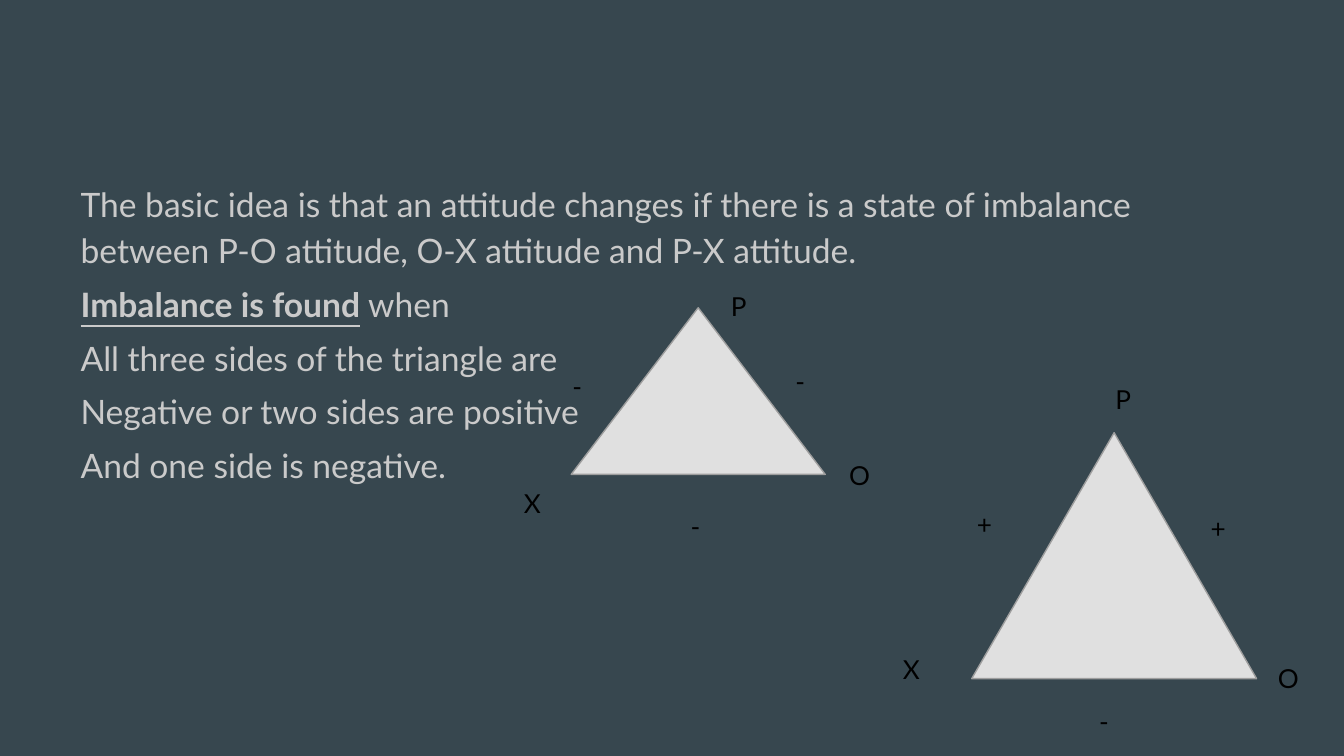
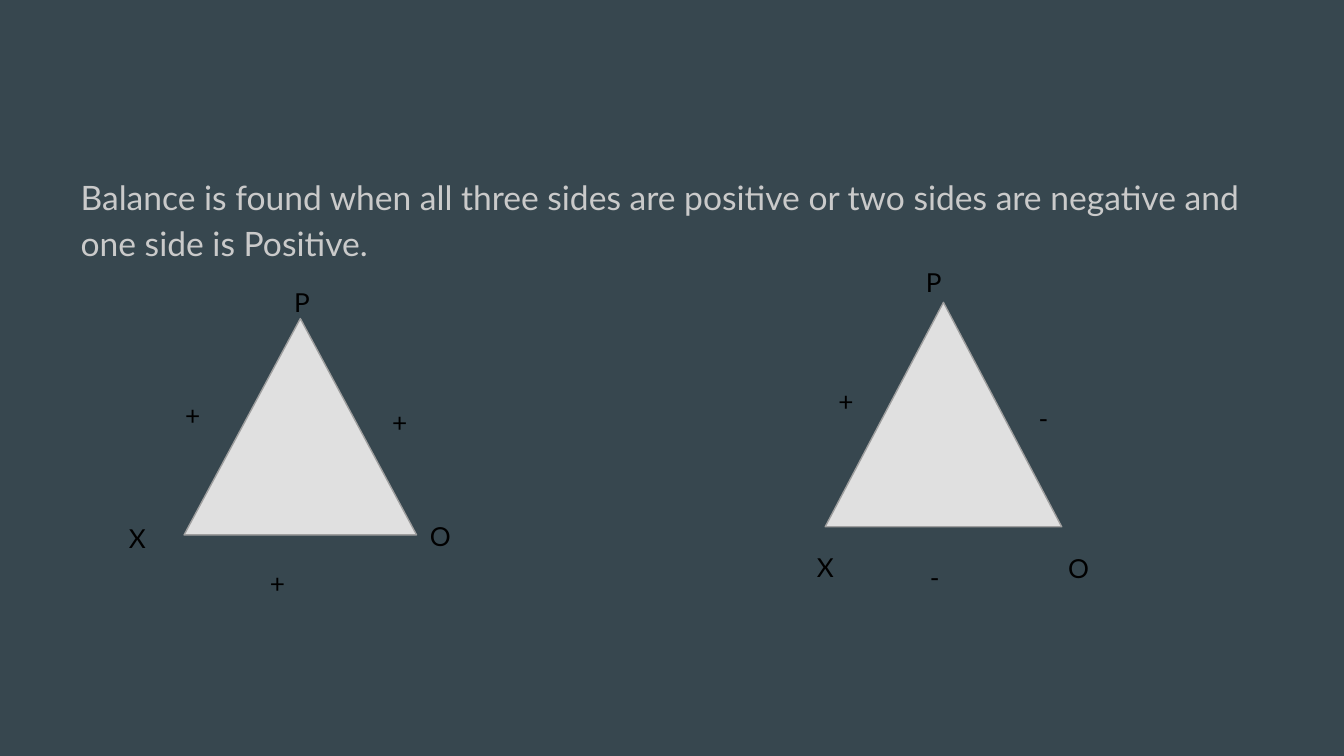
from pptx import Presentation
from pptx import util as u
from pptx.dml import color
from pptx.enum import shapes, text
from pptx.oxml import xmlchemy

PX = u.Inches(1) // 100
SLIDE_WIDTH = 1000
FONT = "Lato"
BACKGROUND, BODY, LABEL = "37474F", "CACACA", "000000"
FILL, OUTLINE = "E0E0E0", "9E9E9E"

SLIDES = [
    {
        "body": (50, 127, 900, 371),
        "paragraphs": [
            [("The basic idea is that an attitude changes if there is a state of imbalance "
              "between P-O attitude, O-X attitude and P-X attitude.", False)],
            [("Imbalance is found", True), (" when", False)],
            [("All three sides of the triangle are", False)],
            [("Negative or two sides are positive", False)],
            [("And one side is negative.", False)],
        ],
        "triangles": [
            ((425, 229, 189, 124), [
                ("P", 534, 206, 62, 32), ("O", 622, 332, 38, 40), ("X", 380, 353, 38, 20),
                ("-", 416, 266, 38, 27), ("-", 582, 262, 38, 32), ("-", 504, 375, 38, 9)]),
            ((723, 322, 212, 183), [
                ("P", 820, 275, 38, 32), ("X", 662, 476, 55, 40), ("O", 941, 483, 38, 40),
                ("+", 717, 368, 38, 40), ("+", 891, 371, 55, 40), ("-", 808, 515, 62, 20)]),
        ],
    },
    {
        "body": (50, 122, 900, 371),
        "paragraphs": [
            [("Balance is found when all three sides are positive or two sides are negative "
              "and one side is Positive.", False)],
        ],
        "triangles": [
            ((137, 237, 173, 161), [
                ("P", 209, 203, 69, 35), ("X", 86, 379, 38, 55), ("O", 310, 377, 45, 42),
                ("+", 128, 287, 45, 35), ("+", 282, 292, 28, 29), ("+", 191, 412, 45, 29)]),
            ((614, 225, 176, 167), [
                ("P", 679, 188, 61, 29), ("X", 598, 400, 45, 35), ("O", 785, 401, 53, 35),
                ("+", 614, 277, 38, 21), ("-", 682, 408, 38, 21), ("-", 763, 289, 45, 35)]),
        ],
    },
]


def rgb(value):
    return color.RGBColor.from_string(value)


def scaled(box):
    return [length * PX for length in box]


def write(frame, paragraphs, size, fill, inset, spacing=None, before=None):
    frame.word_wrap = True
    frame.auto_size = text.MSO_AUTO_SIZE.NONE
    frame.vertical_anchor = text.MSO_ANCHOR.TOP
    frame.margin_left = frame.margin_right = 10 * PX
    frame.margin_top = frame.margin_bottom = inset * PX
    for index, runs in enumerate(paragraphs):
        paragraph = frame.add_paragraph() if index else frame.paragraphs[0]
        paragraph.alignment = text.PP_ALIGN.LEFT
        paragraph.line_spacing = spacing
        if before is not None:
            paragraph.space_before = u.Pt(before)
        for words, emphasis in runs:
            run = paragraph.add_run()
            run.text = words
            run.font.name = FONT
            run.font.size = u.Pt(size)
            run.font.color.rgb = rgb(fill)
            if emphasis:
                run.font.bold = run.font.underline = True


def remove_bullets(frame):
    for paragraph in frame.paragraphs:
        properties = paragraph._p.get_or_add_pPr()
        properties.set("marL", "0")
        properties.set("indent", "0")
        properties.append(xmlchemy.OxmlElement("a:buNone"))


def add_body(slide, box, paragraphs):
    body = slide.placeholders[1]
    body.left, body.top, body.width, body.height = scaled(box)
    write(body.text_frame, paragraphs, size=18, fill=BODY, inset=5, spacing=1.15, before=4)
    remove_bullets(body.text_frame)


def add_triangle(slide, box, labels):
    shape = slide.shapes.add_shape(shapes.MSO_SHAPE.ISOSCELES_TRIANGLE, *scaled(box))
    shape.shadow.inherit = False
    shape.fill.solid()
    shape.fill.fore_color.rgb = rgb(FILL)
    shape.line.color.rgb = rgb(OUTLINE)
    shape.line.width = u.Pt(0.75)
    for words, *label_box in labels:
        label = slide.shapes.add_textbox(*scaled(label_box))
        write(label.text_frame, [[(words, False)]], size=14, fill=LABEL, inset=10)


def main():
    presentation = Presentation()
    presentation.slide_width = SLIDE_WIDTH * PX
    presentation.slide_height = SLIDE_WIDTH * PX * 9 // 16
    background = presentation.slide_master.background.fill
    background.solid()
    background.fore_color.rgb = rgb(BACKGROUND)
    for content in SLIDES:
        slide = presentation.slides.add_slide(presentation.slide_layouts[1])
        title = slide.shapes.title.element
        title.getparent().remove(title)
        add_body(slide, content["body"], content["paragraphs"])
        for box, labels in content["triangles"]:
            add_triangle(slide, box, labels)
    presentation.save("out.pptx")


if __name__ == "__main__":
    main()
